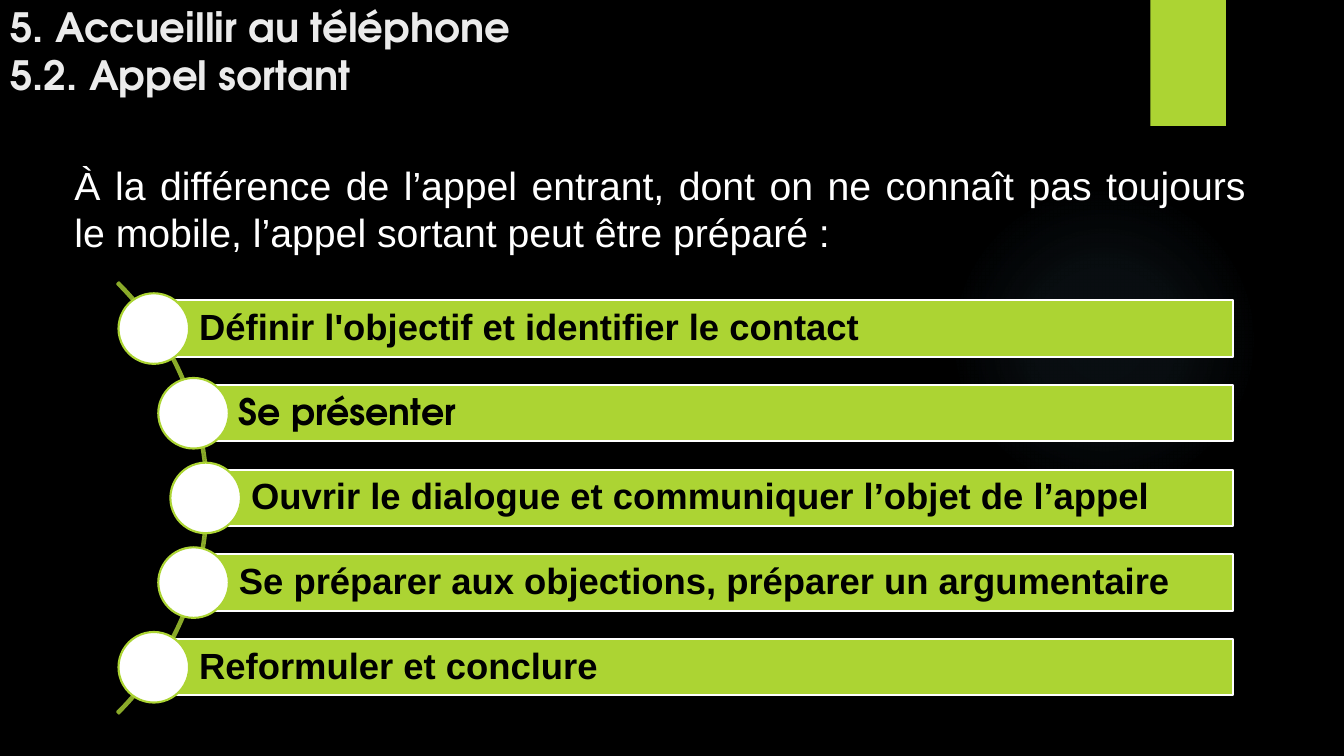
from math import sqrt

from lxml.etree import SubElement
from pptx import Presentation
from pptx.dml.color import RGBColor
from pptx.enum.shapes import MSO_SHAPE
from pptx.enum.text import MSO_ANCHOR, MSO_AUTO_SIZE, PP_ALIGN
from pptx.oxml.ns import qn
from pptx.util import Inches, Pt

LIME = "ACD433"
WHITE = "FFFFFF"
BLACK = "000000"
DISPLAY_FONT = "TeX Gyre Adventor"

STEPS = [
    ("Définir l'objectif et identifier le contact", "Arial"),
    ("Se présenter", DISPLAY_FONT),
    ("Ouvrir le dialogue et communiquer l’objet de l’appel", "Arial"),
    ("Se préparer aux objections, préparer un argumentaire", "Arial"),
    ("Reformuler et conclure", "Arial"),
]


def colour(hex_value):
    return RGBColor.from_string(hex_value)


def write_text(shape, text, size, hex_value, font="Arial", bold=False,
               align=PP_ALIGN.LEFT, anchor=MSO_ANCHOR.TOP, spacing=None,
               left_inset=0.1):
    frame = shape.text_frame
    frame.word_wrap = True
    frame.auto_size = MSO_AUTO_SIZE.NONE
    frame.vertical_anchor = anchor
    frame.margin_left = Inches(left_inset)
    para = frame.paragraphs[0]
    para.text = text
    para.alignment = align
    para.line_spacing = spacing
    for span in para.runs:
        span.font.name = font
        span.font.size = Pt(size)
        span.font.bold = bold
        span.font.color.rgb = colour(hex_value)


def draw_shape(page, kind, box, fill=None, line=None):
    shape = page.shapes.add_shape(kind, *map(Inches, box))
    shape.shadow.inherit = False
    if fill:
        shape.fill.solid()
        shape.fill.fore_color.rgb = colour(fill)
    else:
        shape.fill.background()
    if line:
        shape.line.color.rgb = colour(line)
        shape.line.width = Pt(1.5)
    else:
        shape.line.fill.background()
    return shape


def draw_glow(page, box):
    """Faint blue halo that fades out from its centre."""
    glow = draw_shape(page, MSO_SHAPE.OVAL, box)
    properties = glow._element.spPr
    blank = properties.find(qn("a:noFill"))
    gradient = properties.makeelement(qn("a:gradFill"))
    properties.replace(blank, gradient)
    stops = SubElement(gradient, qn("a:gsLst"))
    for position, opacity in ((0, 7), (36, 6), (69, 0)):
        stop = SubElement(stops, qn("a:gs"), pos=str(position * 1000))
        tint = SubElement(stop, qn("a:srgbClr"), val="7AC4F0")
        SubElement(tint, qn("a:alpha"), val=str(opacity * 1000))
    circle = SubElement(gradient, qn("a:path"), path="circle")
    SubElement(circle, qn("a:fillToRect"),
               {side: "50000" for side in "ltrb"})


def draw_title(page, box):
    title = page.shapes.title
    title.left, title.top, title.width, title.height = map(Inches, box)
    write_text(title, "5. Accueillir au téléphone\v5.2. Appel sortant", 28.8,
               "EBEBEB", font=DISPLAY_FONT, bold=True,
               anchor=MSO_ANCHOR.BOTTOM)


def draw_introduction(page, box):
    introduction = page.shapes.add_textbox(*map(Inches, box))
    write_text(introduction,
               "À la différence de l’appel entrant, dont on ne connaît pas "
               "toujours le mobile, l’appel sortant peut être préparé\u00a0:",
               28, WHITE, align=PP_ALIGN.JUSTIFY)


def draw_steps(page, box):
    """Bars hung on a quarter circle that bulges to the right."""
    left, top, width, height = box
    diameter, radius, pitch = 6.05, 3, 0.84
    bar_height, dot = 0.56, 0.7
    centre_x, centre_y = left - 2.13, top + height / 2

    arc = draw_shape(page, MSO_SHAPE.BLOCK_ARC,
                     (centre_x - diameter / 2, centre_y - diameter / 2,
                      diameter, diameter), line="8AAA29")
    for index, value in enumerate((189, 27, 0.004)):
        arc.adjustments[index] = value

    for index, (text, font) in enumerate(STEPS):
        offset = (index - (len(STEPS) - 1) / 2) * pitch
        x = centre_x + sqrt(radius ** 2 - offset ** 2)
        y = centre_y + offset
        bar = draw_shape(page, MSO_SHAPE.RECTANGLE,
                         (x, y - bar_height / 2, left + width - x, bar_height),
                         LIME, WHITE)
        write_text(bar, text, 26, BLACK, font=font, bold=True,
                   anchor=MSO_ANCHOR.MIDDLE, spacing=0.9, left_inset=0.45)
        draw_shape(page, MSO_SHAPE.OVAL,
                   (x - dot / 2, y - dot / 2, dot, dot), WHITE, LIME)


def main():
    deck = Presentation()
    deck.slide_width, deck.slide_height = Inches(13.33), Inches(7.5)
    page = deck.slides.add_slide(deck.slide_layouts[5])
    page.background.fill.solid()
    page.background.fill.fore_color.rgb = colour(BLACK)
    draw_glow(page, (9.41, 1.83, 3.08, 3.08))
    draw_shape(page, MSO_SHAPE.RECTANGLE, (11.41, 0, 0.75, 1.25), LIME)
    draw_title(page, (0, 0, 12.95, 1.03))
    draw_introduction(page, (0.64, 1.55, 11.81, 1.04))
    draw_steps(page, (1.17, 2.8, 11.06, 4.28))
    deck.save("out.pptx")


if __name__ == "__main__":
    main()
